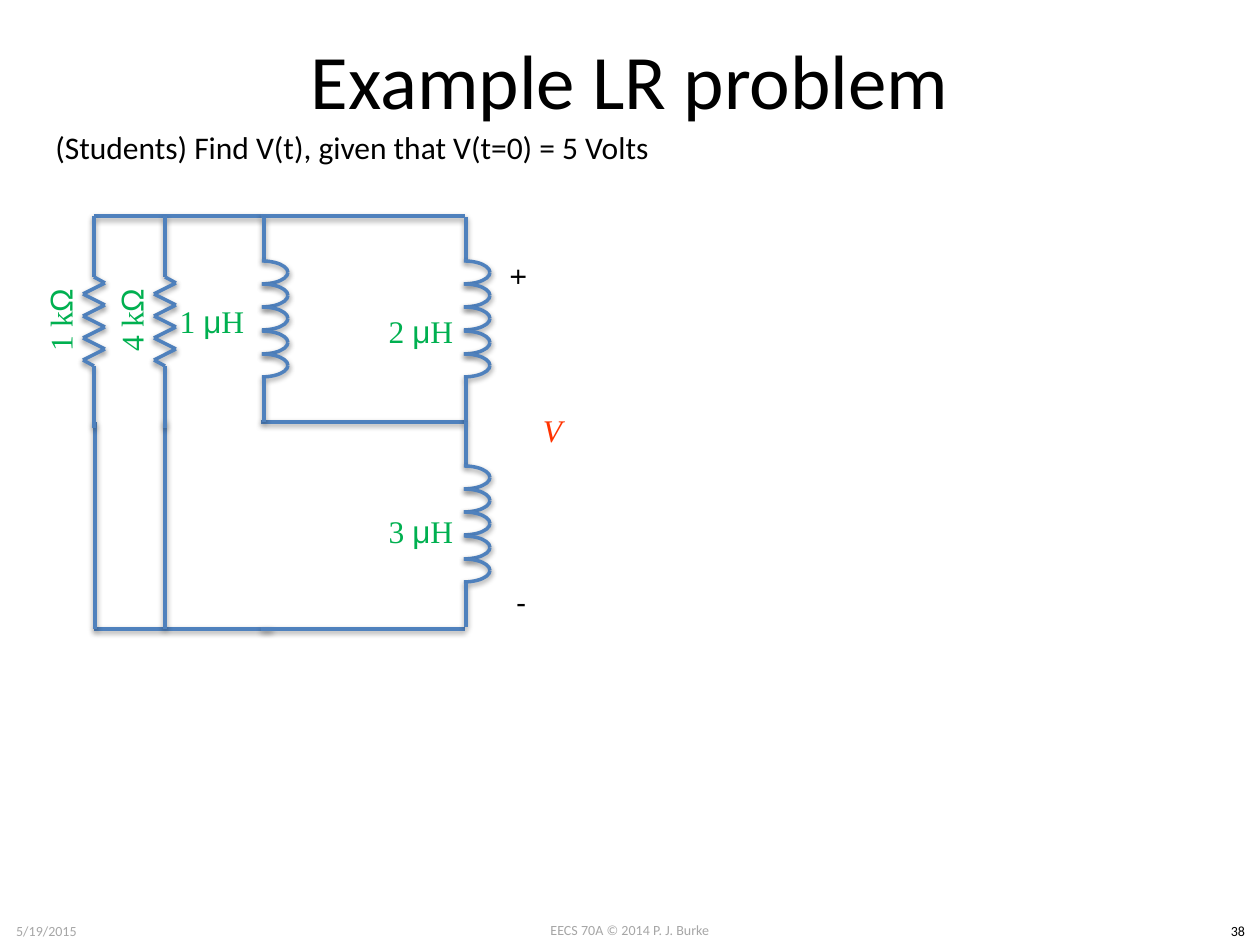
from dataclasses import dataclass
from itertools import pairwise
from typing import NamedTuple

from lxml import etree
from pptx import Presentation
from pptx import util as u
from pptx.dml.color import RGBColor
from pptx.enum import shapes, text
from pptx.oxml.ns import qn

PX = 914400 / 126


@dataclass(frozen=True)
class Theme:
    wire: RGBColor = RGBColor(0x4F, 0x81, 0xBD)
    ink: RGBColor = RGBColor(0, 0, 0)
    muted: RGBColor = RGBColor(0xA6, 0xA6, 0xA6)
    value: RGBColor = RGBColor(0x00, 0xB0, 0x50)
    unknown: RGBColor = RGBColor(0xFF, 0x33, 0x00)
    title_size: int = 44
    body_size: int = 18
    footer_size: int = 8
    sans: str = "Calibri"
    serif: str = "Times New Roman"
    symbol: str = "Arial"
    wire_width: int = 2


class Box(NamedTuple):
    left: int
    top: int
    width: int
    height: int


class Point(NamedTuple):
    x: int
    y: int


@dataclass(frozen=True)
class Label:
    box: Box
    words: str
    size: int = 18
    font: str = "Calibri"
    color: RGBColor = RGBColor(0, 0, 0)
    italic: bool = False
    centered: bool = False
    middle: bool = False
    wrap: bool = True
    rotation: int = 0


@dataclass(frozen=True)
class Resistor:
    x: int
    value: str


@dataclass(frozen=True)
class Inductor:
    x: int
    top: int
    value: str
    value_at: Point


THEME = Theme()
TOP, MIDDLE, BOTTOM = 216, 422, 629
LEFT, SECOND, THIRD, RIGHT = 94, 165, 261, 465

LABELS = [
    Label(Box(483, 915, 294, 30), "EECS 70A © 2014 P. J. Burke",
          THEME.footer_size, color=THEME.muted, centered=True),
    Label(Box(0, 916, 93, 30), "5/19/2015",
          THEME.footer_size, color=THEME.muted, centered=True),
    Label(Box(1216, 916, 44, 30), "38", THEME.footer_size, centered=True),
    Label(Box(43, 122, 630, 50),
          "(Students) Find V(t), given that V(t=0) = 5 Volts", wrap=False),
    Label(Box(500, 253, 42, 50), "+", wrap=False, rotation=90),
    Label(Box(504, 391, 97, 77), "V", font=THEME.serif, color=THEME.unknown,
          italic=True, centered=True, middle=True),
    Label(Box(504, 577, 35, 50), "-", wrap=False),
]
WIRES = [
    (Point(LEFT, TOP), Point(THIRD, TOP)),
    (Point(THIRD, TOP), Point(RIGHT, TOP)),
    (Point(THIRD, MIDDLE), Point(RIGHT, MIDDLE)),
    (Point(LEFT, BOTTOM), Point(272, BOTTOM)),
    (Point(THIRD, BOTTOM), Point(RIGHT, BOTTOM)),
    (Point(LEFT + 1, BOTTOM), Point(LEFT + 1, MIDDLE)),
    (Point(SECOND, BOTTOM), Point(SECOND, MIDDLE - 2)),
]
RESISTORS = [Resistor(LEFT, "1 kΩ"), Resistor(SECOND, "4 kΩ")]
INDUCTORS = [
    Inductor(264, 217, "1 μH", Point(137, 275)),
    Inductor(466, 217, "2 μH", Point(346, 285)),
    Inductor(466, 422, "3 μH", Point(346, 485)),
]


def emu(px: int) -> u.Emu:
    return u.Emu(round(px * PX))


def scaled(lengths: tuple[int, ...]) -> list[u.Emu]:
    return [emu(length) for length in lengths]


def style_stroke(part) -> None:
    """Give a wire or coil turn its line and soft shadow below."""
    part.line.color.rgb = THEME.wire
    part.line.width = u.Pt(THEME.wire_width)
    effects = etree.SubElement(part._element.spPr, qn("a:effectLst"))
    shadow = etree.SubElement(effects, qn("a:outerShdw"), blurRad="40000",
                              dist="20000", dir="5400000", rotWithShape="0")
    black = etree.SubElement(shadow, qn("a:srgbClr"), val="000000")
    etree.SubElement(black, qn("a:alpha"), val="38000")


def draw_wire(slide, start: Point, end: Point) -> None:
    wire = slide.shapes.add_connector(
        shapes.MSO_CONNECTOR.STRAIGHT, *scaled(start), *scaled(end))
    style_stroke(wire)


def draw_label(slide, label: Label):
    holder = slide.shapes.add_textbox(*scaled(label.box))
    holder.rotation = label.rotation
    frame = holder.text_frame
    frame.word_wrap = label.wrap
    if label.middle:
        frame.vertical_anchor = text.MSO_ANCHOR.MIDDLE
    paragraph = frame.paragraphs[0]
    paragraph.text = label.words
    if label.centered:
        paragraph.alignment = text.PP_ALIGN.CENTER
    font = paragraph.font
    font.name, font.size = label.font, u.Pt(label.size)
    font.color.rgb, font.italic = label.color, label.italic
    return paragraph


def draw_value(slide, corner: Point, value: str, rotation: int = 0) -> None:
    """Write a component value, with its Greek letter in the symbol font."""
    paragraph = draw_label(slide, Label(
        Box(*corner, 150, 92), "", THEME.body_size, THEME.serif,
        THEME.value, centered=True, middle=True, rotation=rotation))
    symbol = next(letter for letter in value if letter in "Ωμ")
    before, after = value.split(symbol)
    for words, face in ((before, THEME.serif), (symbol, THEME.symbol),
                        (after, THEME.serif)):
        if words:
            run = paragraph.add_run()
            run.text = words
            run.font.name, run.font.size = face, u.Pt(THEME.body_size)
            run.font.color.rgb = THEME.value


def draw_resistor(slide, resistor: Resistor) -> None:
    x, start, end, reach, step = resistor.x, 277, 366, 11, 11
    draw_value(slide, Point(x - 109, 274), resistor.value, rotation=270)
    corners = [Point(x - reach if i % 2 else x + reach, start + 6 + i * step)
               for i in range(8)]
    outline = [Point(x, TOP), Point(x, start), *corners,
               Point(x, end), Point(x, MIDDLE + 6)]
    for segment in pairwise(outline):
        draw_wire(slide, *segment)


def draw_inductor(slide, inductor: Inductor) -> None:
    x, lead, coil = inductor.x, 44, 117
    start = inductor.top + lead
    end = start + coil
    draw_wire(slide, Point(x, inductor.top), Point(x, start))
    for turn in range(5):
        box = Box(x - 28, start + turn * coil // 5, 52, 23)
        for lower in (False, True):
            arc = slide.shapes.add_shape(shapes.MSO_SHAPE.ARC, *scaled(box))
            arc.fill.background()
            style_stroke(arc)
            if lower:
                arc._element.spPr.find(qn("a:xfrm")).set("flipV", "1")
    draw_wire(slide, Point(x, end), Point(x, end + lead))
    draw_value(slide, inductor.value_at, inductor.value)


def draw_title(slide, words: str) -> None:
    title = slide.shapes.title
    title.left, title.top, title.width, title.height = scaled(Box(63, 0, 1134, 158))
    title.text_frame.vertical_anchor = text.MSO_ANCHOR.MIDDLE
    paragraph = title.text_frame.paragraphs[0]
    paragraph.text = words
    paragraph.alignment = text.PP_ALIGN.CENTER
    paragraph.font.name, paragraph.font.size = THEME.sans, u.Pt(THEME.title_size)
    paragraph.font.color.rgb = THEME.ink


def main() -> None:
    deck = Presentation()
    deck.slide_width, deck.slide_height = emu(1260), emu(945)
    slide = deck.slides.add_slide(deck.slide_layouts[5])
    draw_title(slide, "Example LR problem")
    for label in LABELS:
        draw_label(slide, label)
    for wire in WIRES:
        draw_wire(slide, *wire)
    for resistor in RESISTORS:
        draw_resistor(slide, resistor)
    for inductor in INDUCTORS:
        draw_inductor(slide, inductor)
    deck.save("out.pptx")


if __name__ == "__main__":
    main()
